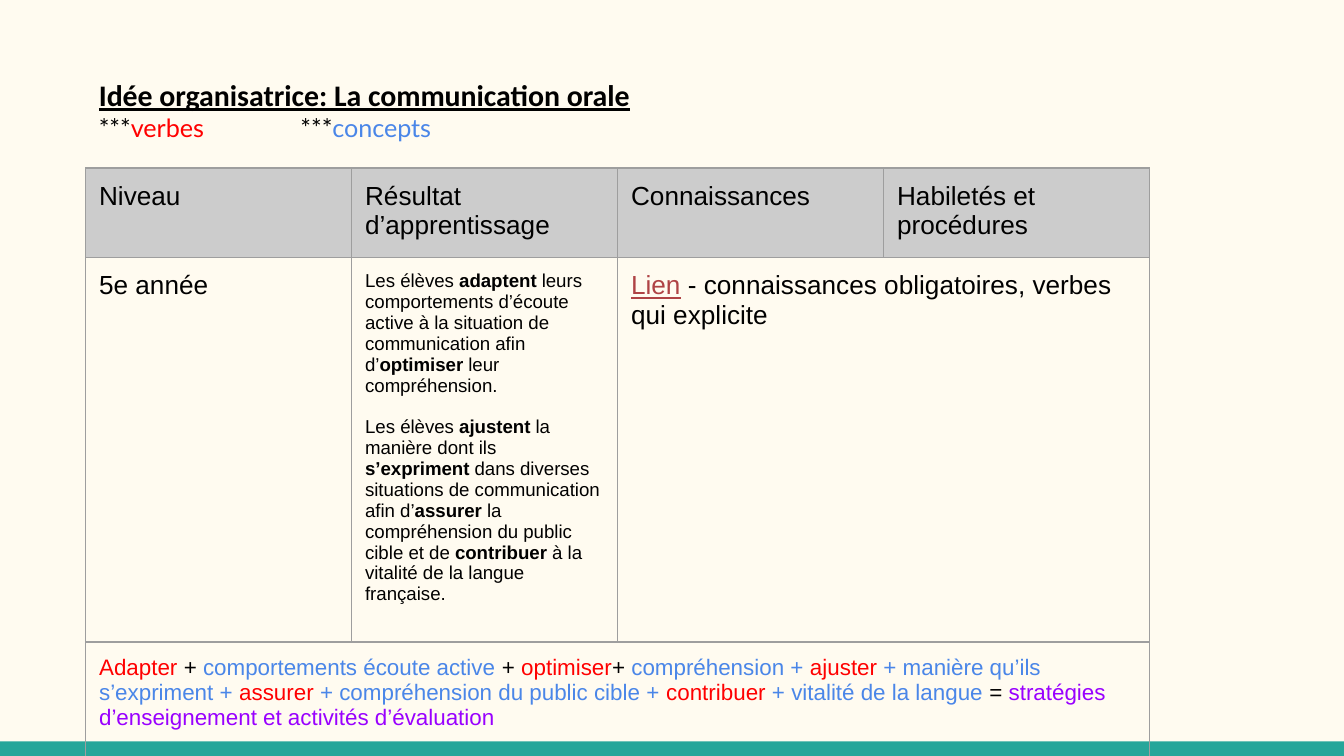
from dataclasses import dataclass

from lxml import etree
from pptx import Presentation
from pptx.dml.color import RGBColor
from pptx.enum.shapes import MSO_SHAPE
from pptx.enum.text import MSO_ANCHOR
from pptx.oxml.ns import qn
from pptx.util import Pt

RECTANGLE = MSO_SHAPE.RECTANGLE
TOP = MSO_ANCHOR.TOP


@dataclass(frozen=True)
class Theme:
    background: str = "FFFBF0"
    strip: str = "26A69A"
    header: str = "CCCCCC"
    border: str = "9E9E9E"
    plain: str = "000000"
    verb: str = "FF0000"
    concept: str = "4A86E8"
    link: str = "AF4345"
    strategy: str = "9900FF"
    title_font: str = "Calibri"
    legend_font: str = "Lato"
    table_font: str = "Arial"
    title_size: float = 16
    legend_size: float = 13.5
    cell_size: float = 14
    outcome_size: float = 10
    formula_size: float = 12
    border_width: float = 0.75
    inset: float = 7.2


THEME = Theme()

TITLE = [("Idée organisatrice: La communication orale", "title")]
LEGEND = [("***", "plain"), ("verbes", "verb"), ("\t\t***", "plain"), ("concepts", "concept")]
HEADERS = ["Niveau", "Résultat d’apprentissage", "Connaissances", "Habiletés et procédures"]
LEVEL = [("5e année", "plain")]
OUTCOMES = [
    [
        ("Les élèves", "plain"),
        (" adaptent ", "bold"),
        ("leurs comportements d’écoute active à la situation de communication afin d’", "plain"),
        ("optimiser", "bold"),
        (" leur compréhension.", "plain"),
    ],
    [
        ("Les élèves", "plain"),
        (" ajustent ", "bold"),
        ("la manière dont ils ", "plain"),
        ("s’expriment ", "bold"),
        ("dans diverses situations de communication afin d’", "plain"),
        ("assurer", "bold"),
        (" la compréhension du public cible et de", "plain"),
        (" contribuer ", "bold"),
        ("à la vitalité de la langue française.", "plain"),
    ],
]
KNOWLEDGE = [("Lien", "link"), (" - connaissances obligatoires, verbes qui explicite", "plain")]
FORMULA = [
    ("Adapter", "verb"),
    (" + ", "plain"),
    ("comportements écoute active ", "concept"),
    ("+ ", "plain"),
    ("optimiser", "verb"),
    ("+ ", "plain"),
    ("compréhension +", "concept"),
    (" ajuster", "verb"),
    (" + manière qu’ils s’expriment + ", "concept"),
    ("assurer ", "verb"),
    ("+ compréhension du public cible + ", "concept"),
    ("contribuer", "verb"),
    (" + vitalité de la langue ", "concept"),
    ("= ", "plain"),
    ("stratégies d’enseignement et activités d’évaluation", "strategy"),
]

STYLES = {
    "plain": (THEME.plain, False, False),
    "bold": (THEME.plain, True, False),
    "title": (THEME.plain, True, True),
    "link": (THEME.link, False, True),
    "verb": (THEME.verb, False, False),
    "concept": (THEME.concept, False, False),
    "strategy": (THEME.strategy, False, False),
}

SLIDE_WIDTH, SLIDE_HEIGHT = 720, 405
STRIP_HEIGHT = 7.8
LEFT = 45.9
TITLE_TOP, TITLE_WIDTH, TITLE_HEIGHT = 33.8, 653, 48.2
TABLE_TOP = 90
COLUMN_WIDTH = 142.5
ROW_HEIGHTS = [46.5, 197.5, 74]


def set_insets(holder):
    for side in ("left", "top", "right", "bottom"):
        setattr(holder, f"margin_{side}", Pt(THEME.inset))
    holder.vertical_anchor = TOP


def add_runs(paragraph, pieces, font, size):
    for text, style in pieces:
        color, bold, underline = STYLES[style]
        run = paragraph.add_run()
        run.text = text
        run.font.name = font
        run.font.size = Pt(size)
        run.font.bold = bold
        run.font.underline = underline
        run.font.color.rgb = RGBColor.from_string(color)


def add_borders(cell):
    properties = cell._tc.get_or_add_tcPr()
    for index, edge in enumerate(("a:lnL", "a:lnR", "a:lnT", "a:lnB")):
        line = etree.Element(qn(edge), w=str(Pt(THEME.border_width)))
        fill = etree.SubElement(line, qn("a:solidFill"))
        etree.SubElement(fill, qn("a:srgbClr"), val=THEME.border)
        properties.insert(index, line)


def fill_cell(cell, paragraphs, size):
    frame = cell.text_frame
    for index, pieces in enumerate(paragraphs):
        paragraph = frame.add_paragraph() if index else frame.paragraphs[0]
        if index:
            paragraph.space_before = Pt(size * 1.12)
        add_runs(paragraph, pieces, THEME.table_font, size)


def add_strip(slide):
    strip = slide.shapes.add_shape(
        RECTANGLE, 0, Pt(SLIDE_HEIGHT - STRIP_HEIGHT), Pt(SLIDE_WIDTH), Pt(STRIP_HEIGHT)
    )
    strip.shadow.inherit = False
    strip.fill.solid()
    strip.fill.fore_color.rgb = RGBColor.from_string(THEME.strip)
    strip.line.fill.background()


def add_title(slide):
    frame = slide.shapes.add_textbox(
        Pt(LEFT), Pt(TITLE_TOP), Pt(TITLE_WIDTH), Pt(TITLE_HEIGHT)
    ).text_frame
    frame.word_wrap = True
    set_insets(frame)
    add_runs(frame.paragraphs[0], TITLE, THEME.title_font, THEME.title_size)
    add_runs(frame.add_paragraph(), LEGEND, THEME.legend_font, THEME.legend_size)


def add_outcome_table(slide):
    table = slide.shapes.add_table(
        len(ROW_HEIGHTS), len(HEADERS), Pt(LEFT), Pt(TABLE_TOP),
        Pt(COLUMN_WIDTH * len(HEADERS)), Pt(sum(ROW_HEIGHTS)),
    ).table
    table.first_row = table.horz_banding = False
    for column in table.columns:
        column.width = Pt(COLUMN_WIDTH)
    for row, height in zip(table.rows, ROW_HEIGHTS):
        row.height = Pt(height)
    table.cell(1, 2).merge(table.cell(1, 3))
    table.cell(2, 0).merge(table.cell(2, 3))

    for row_index, row in enumerate(table.rows):
        for cell in row.cells:
            set_insets(cell)
            if row_index == 0:
                cell.fill.solid()
                cell.fill.fore_color.rgb = RGBColor.from_string(THEME.header)
            else:
                cell.fill.background()
            add_borders(cell)

    for column_index, header in enumerate(HEADERS):
        fill_cell(table.cell(0, column_index), [[(header, "plain")]], THEME.cell_size)
    fill_cell(table.cell(1, 0), [LEVEL], THEME.cell_size)
    fill_cell(table.cell(1, 1), OUTCOMES, THEME.outcome_size)
    fill_cell(table.cell(1, 2), [KNOWLEDGE], THEME.cell_size)
    fill_cell(table.cell(2, 0), [FORMULA], THEME.formula_size)


def main():
    deck = Presentation()
    deck.slide_width, deck.slide_height = Pt(SLIDE_WIDTH), Pt(SLIDE_HEIGHT)
    slide = deck.slides.add_slide(deck.slide_layouts[6])
    slide.background.fill.solid()
    slide.background.fill.fore_color.rgb = RGBColor.from_string(THEME.background)
    add_strip(slide)
    add_title(slide)
    add_outcome_table(slide)
    deck.save("out.pptx")


if __name__ == "__main__":
    main()
